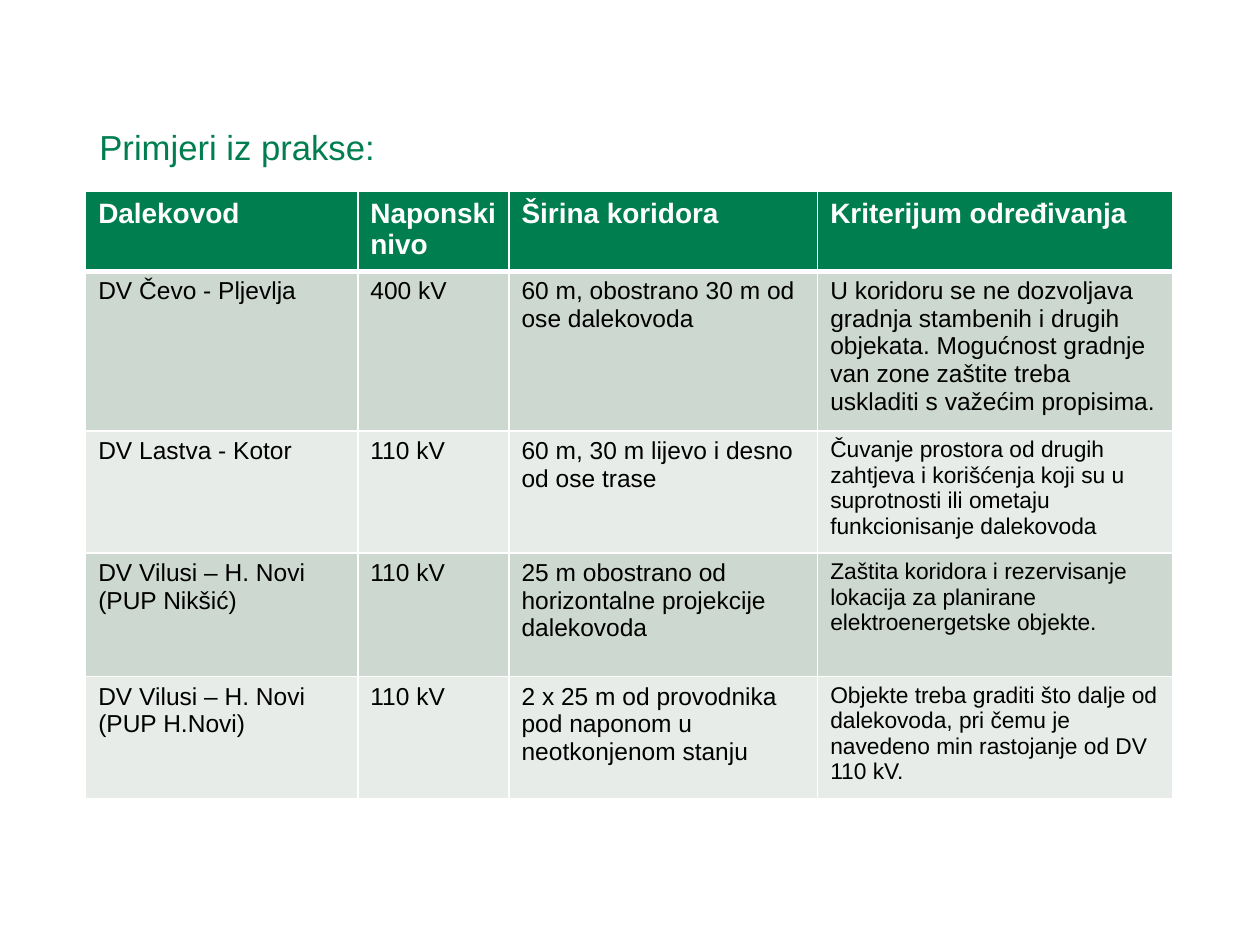
from lxml import etree
from pptx import Presentation
from pptx.dml.color import RGBColor
from pptx.enum.text import MSO_ANCHOR
from pptx.oxml.ns import qn
from pptx.util import Inches, Pt

GREEN, WHITE, BLACK = "007E4F", "FFFFFF", "000000"
BANDS = ["CCD8D0", "E7ECE9"]
HEADING = "Primjeri iz prakse:"
HEADER = ["Dalekovod", "Naponski nivo", "Širina koridora", "Kriterijum određivanja"]
LINES = [
    ["DV Čevo - Pljevlja", "400 kV", "60 m, obostrano 30 m od ose dalekovoda",
     "U koridoru se ne dozvoljava gradnja stambenih i drugih objekata. "
     "Mogućnost gradnje van zone zaštite treba uskladiti s važećim propisima."],
    ["DV Lastva - Kotor", "110 kV", "60 m, 30 m lijevo i desno od ose trase",
     "Čuvanje prostora od drugih zahtjeva i korišćenja koji su u suprotnosti "
     "ili ometaju funkcionisanje dalekovoda"],
    ["DV Vilusi – H. Novi (PUP Nikšić)", "110 kV",
     "25 m obostrano od horizontalne projekcije dalekovoda",
     "Zaštita koridora i rezervisanje lokacija za planirane elektroenergetske objekte."],
    ["DV Vilusi – H. Novi (PUP H.Novi)", "110 kV",
     "2 x 25 m od provodnika pod naponom u neotkonjenom stanju",
     "Objekte treba graditi što dalje od dalekovoda, pri čemu je navedeno "
     "min rastojanje od DV 110 kV."],
]
CRITERION_SIZES = [14, 13, 13, 13]
WIDTHS = [2.16, 1.2, 2.45, 2.82]
HEIGHTS = [0.58, 1.2, 0.9, 0.98, 0.97]
LEFT, TOP, WIDTH = 0.68, 1.52, 8.62


def color(value):
    return RGBColor.from_string(value)


def style(paragraph, size, ink, bold=False):
    for run in paragraph.runs:
        font = run.font
        font.name, font.size, font.bold = "Arial", Pt(size), bold
        font.color.rgb = color(ink)


def add_borders(cell, bottom):
    properties = cell._tc.get_or_add_tcPr()
    edges = [("lnL", 1), ("lnR", 1), ("lnT", 1), ("lnB", bottom)]
    for position, (edge, points) in enumerate(edges):
        line = etree.Element(qn(f"a:{edge}"), w=str(Pt(points)))
        paint = etree.SubElement(line, qn("a:solidFill"))
        etree.SubElement(paint, qn("a:srgbClr"), val=WHITE)
        properties.insert(position, line)


def fill_cell(cell, text, fill, size, ink, bold=False, bottom=1):
    cell.text_frame.text = text
    style(cell.text_frame.paragraphs[0], size, ink, bold)
    cell.fill.solid()
    cell.fill.fore_color.rgb = color(fill)
    add_borders(cell, bottom)


def add_heading(slide):
    frame = slide.shapes.add_textbox(
        Inches(0.69), Inches(0.69), Inches(WIDTH), Inches(0.82)).text_frame
    frame.word_wrap = True
    frame.vertical_anchor = MSO_ANCHOR.MIDDLE
    frame.margin_top = Inches(0.22)
    frame.text = HEADING
    frame.paragraphs[0].line_spacing = 0.9
    style(frame.paragraphs[0], 19.8, GREEN)


def add_corridors(slide):
    corridors = slide.shapes.add_table(
        len(HEIGHTS), len(WIDTHS), Inches(LEFT), Inches(TOP),
        Inches(WIDTH), Inches(sum(HEIGHTS))).table
    for column, width in zip(corridors.columns, WIDTHS):
        column.width = Inches(width)
    for row, height in zip(corridors.rows, HEIGHTS):
        row.height = Inches(height)
    for column, text in enumerate(HEADER):
        fill_cell(corridors.cell(0, column), text, GREEN, 16, WHITE, True, 3)
    for index, (texts, criterion_size) in enumerate(zip(LINES, CRITERION_SIZES)):
        sizes = [14, 14, 14, criterion_size]
        for column, (text, size) in enumerate(zip(texts, sizes)):
            fill_cell(corridors.cell(index + 1, column), text, BANDS[index % 2], size, BLACK)


def main():
    deck = Presentation()
    deck.slide_width, deck.slide_height = Inches(10), Inches(7.5)
    slide = deck.slides.add_slide(deck.slide_layouts[6])
    add_heading(slide)
    add_corridors(slide)
    deck.save("out.pptx")


if __name__ == "__main__":
    main()
